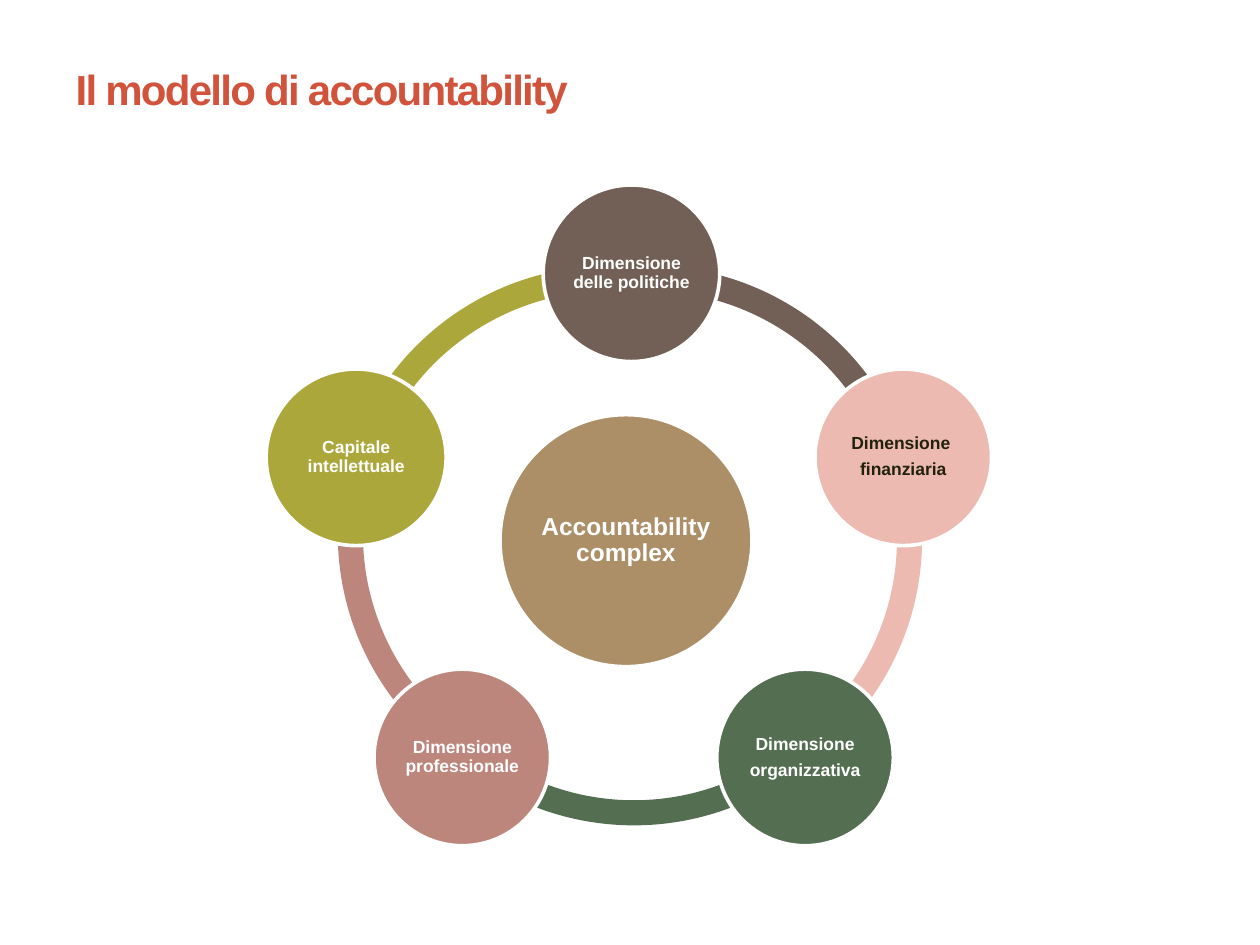
"""Build the slide on the accountability model: five linked circles around a hub."""
from dataclasses import dataclass
from typing import Any

from pptx import Presentation
from pptx.dml.color import RGBColor
from pptx.enum.shapes import MSO_SHAPE
from pptx.enum.text import MSO_ANCHOR, MSO_AUTO_SIZE, PP_ALIGN
from pptx.util import Cm, Pt

WHITE = RGBColor(0xFF, 0xFF, 0xFF)
RED = RGBColor(0xD2, 0x53, 0x3C)
DARK = RGBColor(0x22, 0x21, 0x0C)
TAN = RGBColor(0xAD, 0x8F, 0x67)
BROWN = RGBColor(0x72, 0x60, 0x56)
PINK = RGBColor(0xED, 0xBA, 0xB1)
GREEN = RGBColor(0x53, 0x6E, 0x51)
ROSE = RGBColor(0xBD, 0x86, 0x7C)
OLIVE = RGBColor(0xAC, 0xA7, 0x3B)

SPAN = 11.02
THICK = 0.046
SIDE = 3.56
PER_DEGREE = 0.6


@dataclass
class Arc:
    x: float
    y: float
    start: float
    end: float
    fill: RGBColor


@dataclass
class Disc:
    x: float
    y: float
    text: str
    fill: RGBColor
    wide: float = SIDE
    high: float = SIDE
    size: int = 10
    ink: RGBColor = WHITE
    pad: float = 0.03
    gap: int = 4


ARCS = [
    Arc(12.29, 10.87, 197.82, 274.39, OLIVE),
    Arc(12.32, 10.77, 123.98, 196.79, ROSE),
    Arc(12.78, 11.13, 50.16, 129.84, GREEN),
    Arc(13.08, 10.87, 342.25, 54.4, PINK),
    Arc(13.08, 10.87, 266, 342.15, BROWN),
]
DISCS = [
    Disc(12.62, 10.9, "Accountability complex", TAN, 5.08, 5.08, 14, pad=0.05, gap=6),
    Disc(12.73, 5.51, "Dimensione delle politiche", BROWN),
    Disc(18.21, 9.22, "Dimensione \nfinanziaria", PINK, ink=DARK),
    Disc(16.23, 15.27, "Dimensione\norganizzativa", GREEN),
    Disc(9.32, 15.27, "Dimensione professionale", ROSE),
    Disc(7.18, 9.22, "Capitale intellettuale", OLIVE, wide=3.63),
]


def put(item: Any, form: dict[str, Any]) -> None:
    for key, value in form.items():
        setattr(item, key, value)


def add_form(shapes: Any, kind: MSO_SHAPE, part: Arc | Disc, wide: float, high: float) -> Any:
    shape = shapes.add_shape(
        kind, Cm(part.x - wide / 2), Cm(part.y - high / 2), Cm(wide), Cm(high))
    shape.shadow.inherit = False
    shape.fill.solid()
    shape.fill.fore_color.rgb = part.fill
    return shape


def draw_arc(shapes: Any, arc: Arc) -> None:
    shape = add_form(shapes, MSO_SHAPE.BLOCK_ARC, arc, SPAN, SPAN)
    shape.line.fill.background()
    for i, value in enumerate((arc.start * PER_DEGREE, arc.end * PER_DEGREE, THICK)):
        shape.adjustments[i] = value


def draw_disc(shapes: Any, disc: Disc) -> None:
    shape = add_form(shapes, MSO_SHAPE.OVAL, disc, disc.wide, disc.high)
    shape.line.color.rgb = WHITE
    shape.line.width = Pt(2.08)
    frame = shape.text_frame
    sides = ("left", "top", "right", "bottom")
    put(frame, {f"margin_{side}": Cm(disc.pad) for side in sides})
    put(frame, {"text": disc.text, "word_wrap": True, "vertical_anchor": MSO_ANCHOR.MIDDLE})
    for para in frame.paragraphs:
        put(para, {"alignment": PP_ALIGN.CENTER, "line_spacing": 0.9,
                   "space_after": Pt(disc.gap)})
        for run in para.runs:
            put(run.font, {"name": "Arial", "size": Pt(disc.size), "bold": True})
            run.font.color.rgb = disc.ink


def draw_title(title: Any) -> None:
    put(title, {"left": Cm(1.27), "top": Cm(0.97), "width": Cm(22.86), "height": Cm(1.65)})
    put(title.text_frame, {"text": "Il modello di accountability",
                           "vertical_anchor": MSO_ANCHOR.MIDDLE,
                           "auto_size": MSO_AUTO_SIZE.NONE})
    para = title.text_frame.paragraphs[0]
    para.alignment = PP_ALIGN.LEFT
    run = para.runs[0]
    put(run.font, {"name": "Arial", "size": Pt(24), "bold": True})
    run.font.color.rgb = RED
    run._r.get_or_add_rPr().set("spc", "-100")


def main() -> None:
    deck = Presentation()
    put(deck, {"slide_width": Cm(25.4), "slide_height": Cm(19.05)})
    slide = deck.slides.add_slide(deck.slide_layouts[5])
    draw_title(slide.shapes.title)
    group = slide.shapes.add_group_shape()
    for arc in ARCS:
        draw_arc(group.shapes, arc)
    for disc in DISCS:
        draw_disc(group.shapes, disc)
    deck.save("out.pptx")


if __name__ == "__main__":
    main()
